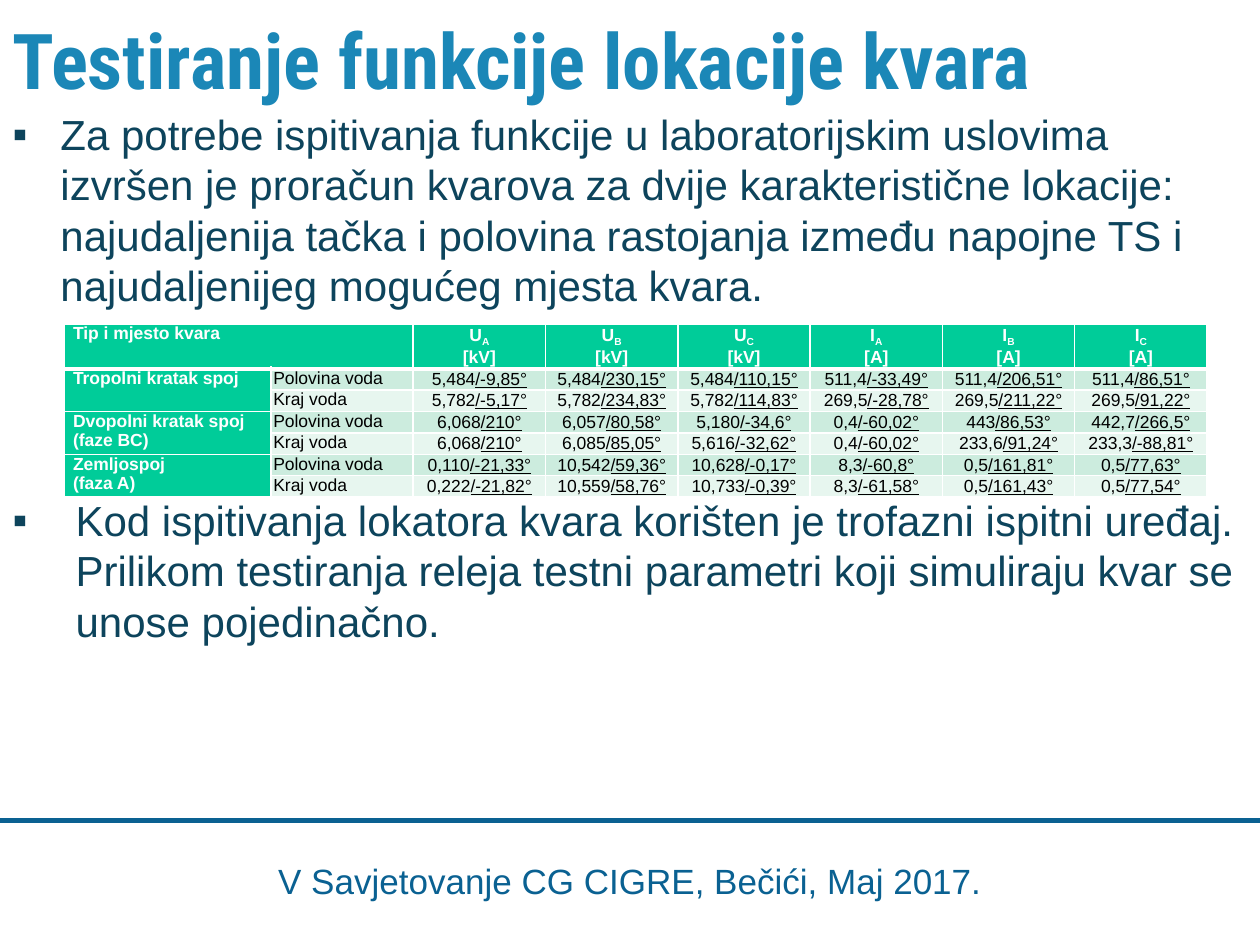
from dataclasses import dataclass

from lxml.etree import SubElement
from pptx import Presentation
from pptx.dml.color import RGBColor
from pptx.enum.shapes import MSO_CONNECTOR as Connector
from pptx.enum.text import MSO_ANCHOR as Anchor, MSO_AUTO_SIZE as AutoSize, PP_ALIGN as Align
from pptx.oxml.ns import qn
from pptx.util import Inches, Pt


@dataclass(frozen=True)
class Theme:
    heading_font: str = "Roboto Condensed"
    text_font: str = "Arial"
    heading: str = "1B87B7"
    body: str = "0D445C"
    footer: str = "0A6192"
    header_fill: str = "00CC99"
    bands: tuple = ("CCECDE", "E7F6EF")
    white: str = "FFFFFF"
    black: str = "000000"
    heading_size: float = 44
    body_size: float = 24
    footer_size: float = 20
    table_size: float = 10
    body_leading: float = 28.8


class SlideBuilder:
    """Places elements on a grid of 100 columns by 75 rows."""

    def __init__(self, deck, theme):
        self.theme = theme
        self.column = deck.slide_width / 100
        self.row = deck.slide_height / 75
        self.slide = deck.slides.add_slide(deck.slide_layouts[1])

    def area(self, left, top, width, height):
        return (round(left * self.column), round(top * self.row),
                round(width * self.column), round(height * self.row))

    def run(self, paragraph, text, size, color, font=None, bold=False,
            underline=False, subscript=False):
        run = paragraph.add_run()
        run.text = text
        run.font.name = font or self.theme.text_font
        run.font.size = Pt(size)
        run.font.bold = bold
        run.font.underline = underline
        run.font.color.rgb = RGBColor.from_string(color)
        if subscript:
            run.font._element.set("baseline", "-25000")

    def placeholder(self, holder, area, top_inset):
        holder.left, holder.top, holder.width, holder.height = self.area(*area)
        frame = holder.text_frame
        frame.word_wrap = True
        frame.auto_size = AutoSize.NONE
        frame.vertical_anchor = Anchor.TOP
        frame.margin_top = Inches(top_inset)
        return frame

    def title(self, text, area):
        frame = self.placeholder(self.slide.shapes.title, area, 0.1)
        heading = frame.paragraphs[0]
        heading.alignment = Align.LEFT
        self.run(heading, text, self.theme.heading_size, self.theme.heading,
                 self.theme.heading_font, bold=True)

    def bullets(self, items, area):
        frame = self.placeholder(self.slide.placeholders[1], area, 0)
        for index, (text, indent, gap) in enumerate(items):
            item = frame.add_paragraph() if index else frame.paragraphs[0]
            properties = item._p.get_or_add_pPr()
            properties.set("marL", str(Inches(indent)))
            properties.set("indent", str(-Inches(indent)))
            SubElement(properties, qn("a:buFont"), typeface=self.theme.text_font)
            SubElement(properties, qn("a:buChar"), char="▪")
            item.line_spacing = Pt(self.theme.body_leading)
            item.space_before = Pt(gap)
            self.run(item, text, self.theme.body_size, self.theme.body)

    def rule(self, row):
        left, top, width, _ = self.area(0, row, 100, 0)
        line = self.slide.shapes.add_connector(Connector.STRAIGHT, left + width, top, left, top)
        line.line.color.rgb = RGBColor.from_string(self.theme.footer)
        line.line.width = Pt(3)
        SubElement(line._element.spPr, qn("a:effectLst"))

    def footer(self, text, area):
        frame = self.slide.shapes.add_textbox(*self.area(*area)).text_frame
        frame.word_wrap = True
        frame.paragraphs[0].alignment = Align.CENTER
        self.run(frame.paragraphs[0], text, self.theme.footer_size, self.theme.footer)

    def table(self, area, column_widths, row_heights):
        table = self.slide.shapes.add_table(
            len(row_heights), len(column_widths), *self.area(*area)).table
        for column, width in zip(table.columns, column_widths):
            column.width = round(width * self.column)
        for row, height in zip(table.rows, row_heights):
            row.height = round(height * self.row)
        return table

    def cell(self, cell, fill, lines, inset=0, centered=False, bottom_line=1, **style):
        """Each line is a list of (text, run options) pairs."""
        cell.margin_left = cell.margin_right = Inches(inset)
        cell.margin_top = cell.margin_bottom = 0
        cell.vertical_anchor = Anchor.MIDDLE if centered else Anchor.TOP
        properties = cell._tc.get_or_add_tcPr()
        for side in "LRTB":
            width = Pt(bottom_line if side == "B" else 1)
            border = SubElement(properties, qn(f"a:ln{side}"), w=str(width))
            SubElement(SubElement(border, qn("a:solidFill")), qn("a:srgbClr"),
                       val=self.theme.white)
        cell.fill.solid()
        cell.fill.fore_color.rgb = RGBColor.from_string(fill)
        for index, pieces in enumerate(lines):
            line = cell.text_frame.add_paragraph() if index else cell.text_frame.paragraphs[0]
            line.alignment = Align.CENTER if centered else Align.LEFT
            for text, options in pieces:
                self.run(line, text, self.theme.table_size, **style, **options)

    def fault_table(self, area, quantities, faults, places):
        theme = self.theme
        heading = {"color": theme.white, "bold": True}
        table = self.table(area, [16.4, 11.3] + [10.5] * len(quantities),
                           [3.3] + [1.7] * len(faults) * len(places))

        # Header row
        table.cell(0, 0).merge(table.cell(0, 1))
        self.cell(table.cell(0, 0), theme.header_fill, [[("Tip i mjesto kvara", {})]],
                  inset=0.07, bottom_line=3, **heading)
        for column, (symbol, phase, unit) in enumerate(quantities, 2):
            self.cell(table.cell(0, column), theme.header_fill,
                      [[(symbol, {}), (phase, {"subscript": True})], [(unit, {})]],
                      centered=True, bottom_line=3, **heading)

        # One group of rows per fault, one row per place
        for group, (names, readings) in enumerate(faults):
            first = 1 + group * len(places)
            table.cell(first, 0).merge(table.cell(first + len(places) - 1, 0))
            self.cell(table.cell(first, 0), theme.header_fill,
                      [[(name, {})] for name in names], inset=0.07, **heading)
            for row, (place, band, values) in enumerate(zip(places, theme.bands, readings), first):
                self.cell(table.cell(row, 1), band, [[(place, {})]], inset=0.02,
                          color=theme.black)
                for column, value in enumerate(values.split(), 2):
                    size, angle = value.split("/")
                    self.cell(table.cell(row, column), band,
                              [[(size, {}), ("/" + angle, {"underline": True})]],
                              centered=True, color=theme.black)


QUANTITIES = [(symbol, phase, unit) for symbol, unit in (("U", "[kV]"), ("I", "[A]"))
              for phase in "ABC"]
PLACES = ["Polovina voda", "Kraj voda"]
FAULTS = [
    (["Tropolni kratak spoj"],
     ["5,484/-9,85° 5,484/230,15° 5,484/110,15° 511,4/-33,49° 511,4/206,51° 511,4/86,51°",
      "5,782/-5,17° 5,782/234,83° 5,782/114,83° 269,5/-28,78° 269,5/211,22° 269,5/91,22°"]),
    (["Dvopolni kratak spoj (faze BC)"],
     ["6,068/210° 6,057/80,58° 5,180/-34,6° 0,4/-60,02° 443/86,53° 442,7/266,5°",
      "6,068/210° 6,085/85,05° 5,616/-32,62° 0,4/-60,02° 233,6/91,24° 233,3/-88,81°"]),
    (["Zemljospoj", "(faza A)"],
     ["0,110/-21,33° 10,542/59,36° 10,628/-0,17° 8,3/-60,8° 0,5/161,81° 0,5/77,63°",
      "0,222/-21,82° 10,559/58,76° 10,733/-0,39° 8,3/-61,58° 0,5/161,43° 0,5/77,54°"]),
]
# Text, hanging indent in inches, space before in points (the table fills the gap)
POINTS = [
    ("Za potrebe ispitivanja funkcije u laboratorijskim uslovima izvršen je proračun kvarova "
     "za dvije karakteristične lokacije: najudaljenija tačka i polovina rastojanja između "
     "napojne TS i najudaljenijeg mogućeg mjesta kvara.", 0.38, 0),
    ("Kod ispitivanja lokatora kvara korišten je trofazni ispitni uređaj. Prilikom testiranja "
     "releja testni parametri koji simuliraju kvar se unose pojedinačno.", 0.5, 105.4),
]


def main():
    deck = Presentation()
    deck.slide_width, deck.slide_height = Inches(10), Inches(7.5)
    builder = SlideBuilder(deck, Theme())
    builder.rule(65.1)
    builder.footer("V Savjetovanje CG CIGRE, Bečići, Maj 2017.", (0, 67.7, 100, 4.4))
    builder.title("Testiranje funkcije lokacije kvara", (0, 0, 100, 8.6))
    builder.bullets(POINTS, (0, 8.6, 100, 44))
    builder.fault_table((5.1, 25.7, 90.7, 13.5), QUANTITIES, FAULTS, PLACES)
    deck.save("out.pptx")


if __name__ == "__main__":
    main()
